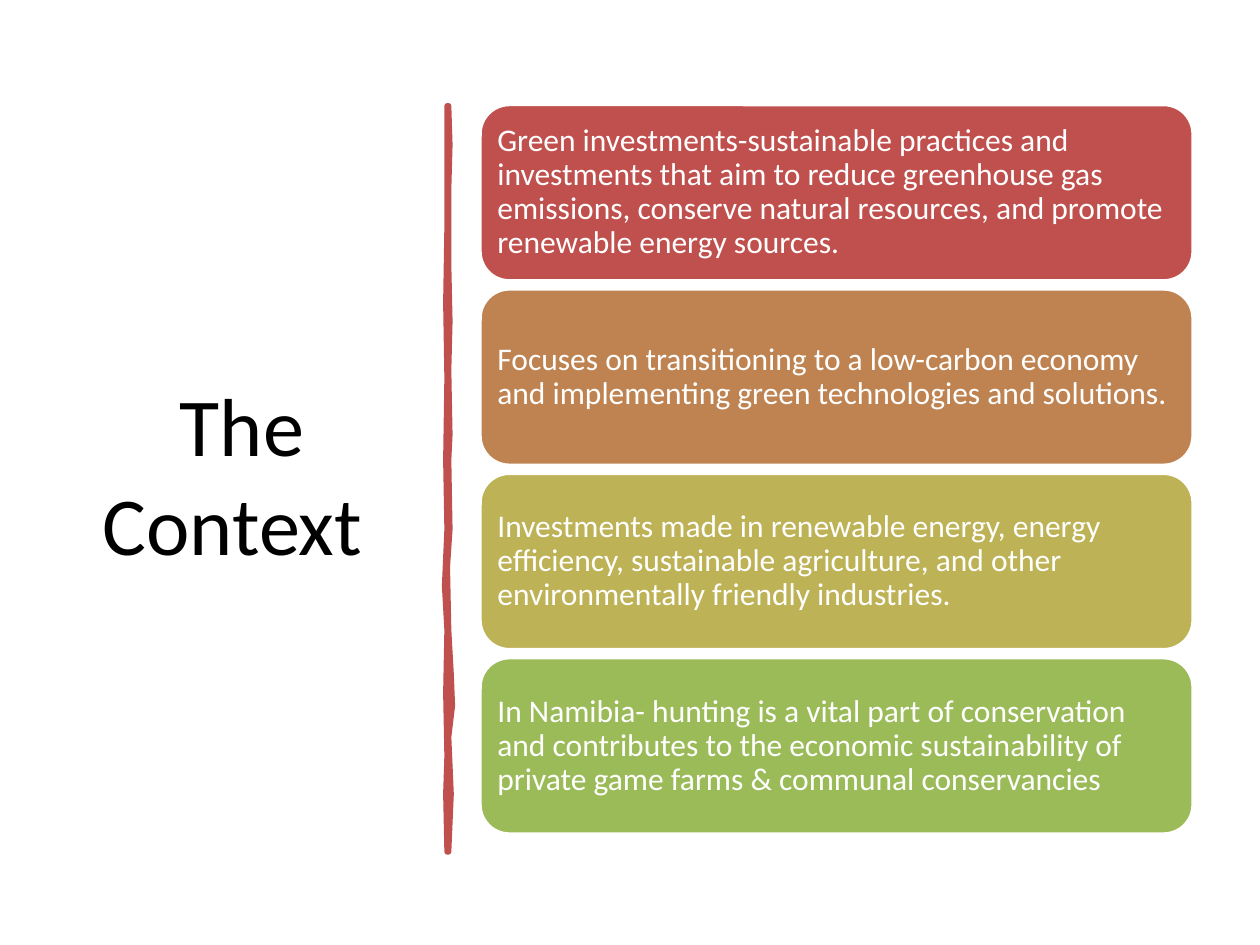
from dataclasses import dataclass

import pptx
import pptx.dml.color
import pptx.enum.shapes
import pptx.enum.text
import pptx.util

Inches = pptx.util.Inches
Pt = pptx.util.Pt
PP_ALIGN = pptx.enum.text.PP_ALIGN
MIDDLE = pptx.enum.text.MSO_ANCHOR.MIDDLE
FONT = "Calibri"
RED = "C0504D"
WHITE = "FFFFFF"

LEFT, TOP, WIDTH, HEIGHT = 3.81, 0.83, 5.66, 1.4
BOTTOM = 6.62
INSET = 0.07

# Outline of the hand-drawn rule: down the right edge, up the left edge
RIGHT_EDGE = [
    (3.56, 0.84), (3.57, 1.15), (3.56, 1.5), (3.56, 2.1), (3.57, 2.55),
    (3.56, 2.94), (3.57, 3.45), (3.56, 3.65), (3.57, 4.2), (3.55, 4.5),
    (3.56, 5.0), (3.58, 5.35), (3.59, 5.6), (3.56, 5.85), (3.58, 6.3),
    (3.56, 6.76),
]
LEFT_EDGE = [
    (3.55, 6.76), (3.54, 6.3), (3.55, 6.0), (3.54, 5.5), (3.55, 5.0),
    (3.53, 4.65), (3.55, 4.2), (3.54, 3.65), (3.55, 3.0), (3.54, 2.4),
    (3.55, 1.8), (3.55, 0.84),
]


@dataclass
class Card:
    text: str
    fill: str


CARDS = [
    Card("Green investments-sustainable practices and investments that aim to "
         "reduce greenhouse gas emissions, conserve natural resources, and "
         "promote renewable energy sources.", RED),
    Card("Focuses on transitioning to a low-carbon economy and implementing "
         "green technologies and solutions.", "BE8351"),
    Card("Investments made in renewable energy, energy efficiency, sustainable "
         "agriculture, and other environmentally friendly industries.", "BDB255"),
    Card("In Namibia- hunting is a vital part of conservation and contributes "
         "to the economic sustainability of private game farms & communal "
         "conservancies", "9BBB59"),
]


def color(code: str) -> pptx.dml.color.RGBColor:
    return pptx.dml.color.RGBColor.from_string(code)


def paint(shape, fill: str, line: str, weight: float) -> None:
    shape.shadow.inherit = False
    shape.fill.solid()
    shape.fill.fore_color.rgb = color(fill)
    shape.line.color.rgb = color(line)
    shape.line.width = Pt(weight)


def write(frame, text: str, size: float, ink: str, align):
    frame.text = text
    frame.word_wrap = True
    frame.vertical_anchor = MIDDLE
    para = frame.paragraphs[0]
    para.alignment = align
    para.font.name = FONT
    para.font.size = Pt(size)
    para.font.color.rgb = color(ink)
    return para


def draw_title(slide) -> None:
    title = slide.shapes.title
    title.left, title.top = Inches(0.52), Inches(0.7)
    title.width, title.height = Inches(2.8), Inches(6.11)
    write(title.text_frame, "The Context ", 47, "000000", PP_ALIGN.CENTER)
    title.text_frame.auto_size = pptx.enum.text.MSO_AUTO_SIZE.NONE


def draw_rule(slide) -> None:
    points = [(Inches(x), Inches(y)) for x, y in RIGHT_EDGE + LEFT_EDGE]
    pen = slide.shapes.build_freeform(*points[0])
    pen.add_line_segments(points[1:], close=True)
    paint(pen.convert_to_shape(), RED, RED, 3.25)


def draw_card(slide, card: Card, top: float) -> None:
    box = slide.shapes.add_shape(
        pptx.enum.shapes.MSO_SHAPE.ROUNDED_RECTANGLE,
        Inches(LEFT), Inches(top), Inches(WIDTH), Inches(HEIGHT))
    paint(box, card.fill, WHITE, 2)
    frame = box.text_frame
    frame.margin_left = frame.margin_right = Inches(INSET)
    frame.margin_top = frame.margin_bottom = Inches(INSET)
    para = write(frame, card.text, 18, WHITE, PP_ALIGN.LEFT)
    para.line_spacing = 0.9


def main() -> None:
    deck = pptx.Presentation()
    deck.slide_width, deck.slide_height = Inches(10), Inches(7.5)
    slide = deck.slides.add_slide(deck.slide_layouts.get_by_name("Title Only"))
    draw_title(slide)
    draw_rule(slide)
    pitch = (BOTTOM - TOP - HEIGHT) / (len(CARDS) - 1)
    for row, card in enumerate(CARDS):
        draw_card(slide, card, TOP + row * pitch)
    deck.save("out.pptx")


if __name__ == "__main__":
    main()
